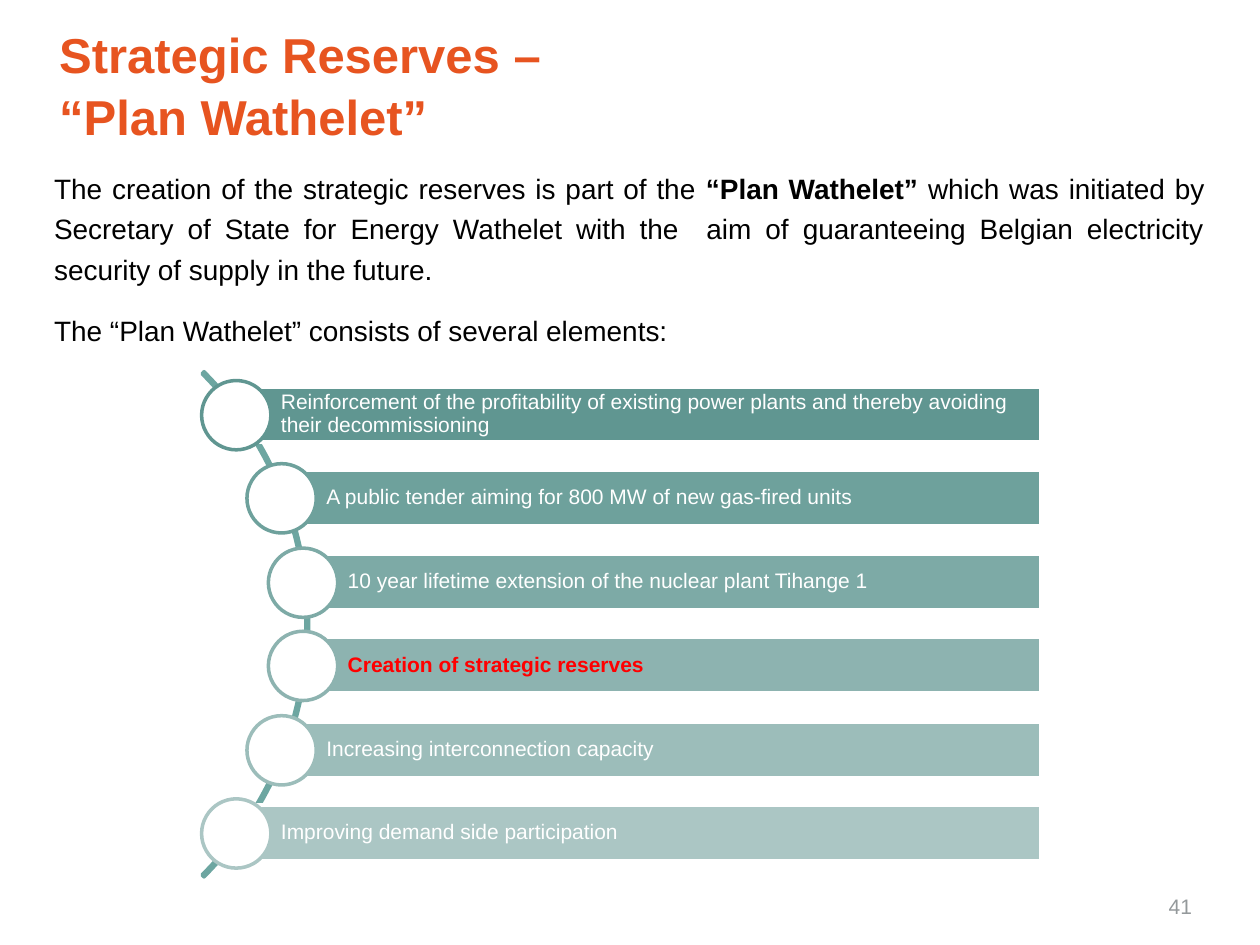
from dataclasses import dataclass

from lxml.etree import SubElement
from pptx import Presentation
from pptx.dml.color import RGBColor
from pptx.enum.shapes import MSO_SHAPE as Shape
from pptx.enum.text import MSO_ANCHOR as Anchor, MSO_AUTO_SIZE as AutoSize, PP_ALIGN as Align
from pptx.oxml.ns import qn
from pptx.util import Emu, Pt

EMU_PER_PX = 9144  # 100 px to the inch


@dataclass(frozen=True)
class Theme:
    font: str = "Arial"
    title: str = "E75420"
    body: str = "000000"
    number: str = "94999B"
    arc: str = "6DA6A1"
    white: str = "FFFFFF"
    highlight: str = "FF0000"
    title_size: int = 28
    body_size: int = 16
    small_size: int = 12
    line_width: int = 2


@dataclass(frozen=True)
class Element:
    text: str
    left: int
    color: str
    highlighted: bool = False


THEME = Theme()
BAR_TOP, BAR_RIGHT, BAR_HEIGHT, BAR_PITCH = 307, 826, 44, 66.4
CIRCLE_SIZE = 55
ELEMENTS = [
    Element("Reinforcement of the profitability of existing power plants "
            "and thereby avoiding their decommissioning", 188, "609691"),
    Element("A public tender aiming for 800 MW of new gas-fired units", 224, "6EA19C"),
    Element("10 year lifetime extension of the nuclear plant Tihange 1", 241, "7DAAA6"),
    Element("Creation of strategic reserves", 241, "8DB3B0", highlighted=True),
    Element("Increasing interconnection capacity", 224, "9CBDBA"),
    Element("Improving demand side participation", 188, "ABC6C4"),
]
INTRODUCTION = [
    ("The creation of the strategic reserves is part of the ", False),
    ("“Plan Wathelet” ", True),
    ("which was initiated by Secretary of State for Energy Wathelet with the  aim of "
     "guaranteeing Belgian electricity security of supply in the future.", False),
]


def px(length: float) -> Emu:
    return Emu(round(length * EMU_PER_PX))


def box(left: int, top: int, width: int, height: int) -> tuple[Emu, ...]:
    return px(left), px(top), px(width), px(height)


def format_font(paragraph, size: int, color: str, bold: bool | None = None) -> None:
    font = paragraph.font
    font.name, font.size, font.bold = THEME.font, Pt(size), bold
    font.color.rgb = RGBColor.from_string(color)


def format_frame(frame, anchor: Anchor, left: int = 0, other: int = 0) -> None:
    """Wrap the text, anchor it and set its left inset and the other three insets."""
    frame.word_wrap, frame.auto_size = True, AutoSize.NONE
    frame.vertical_anchor = anchor
    frame.margin_left = px(left)
    frame.margin_top = frame.margin_right = frame.margin_bottom = px(other)


def add_outlined(slide, kind: Shape, bounds: tuple[Emu, ...], line: str, fill: str | None = None):
    shape = slide.shapes.add_shape(kind, *bounds)
    shape.shadow.inherit = False
    if fill:
        shape.fill.solid()
        shape.fill.fore_color.rgb = RGBColor.from_string(fill)
    else:
        shape.fill.background()
    shape.line.color.rgb = RGBColor.from_string(line)
    shape.line.width = Pt(THEME.line_width)
    return shape


def add_title(slide) -> None:
    title = slide.shapes.title
    title.left, title.top, title.width, title.height = box(47, 21, 906, 94)
    format_frame(title.text_frame, Anchor.BOTTOM)
    title.text_frame.text = "Strategic Reserves – \v“Plan Wathelet”"
    paragraph = title.text_frame.paragraphs[0]
    paragraph.alignment, paragraph.line_spacing = Align.LEFT, 1.05
    format_font(paragraph, THEME.title_size, THEME.title, bold=True)


def add_introduction(slide) -> None:
    frame = slide.shapes.add_textbox(*box(43, 131, 913, 181)).text_frame
    format_frame(frame, Anchor.TOP)
    opening, lead_in = frame.paragraphs[0], frame.add_paragraph()
    opening.alignment = Align.JUSTIFY
    for text, bold in INTRODUCTION:
        run = opening.add_run()
        run.text = text
        if bold:
            run.font.bold = True
    lead_in.text = "The “Plan Wathelet” consists of several elements:"
    lead_in.space_before = Pt(6)
    for paragraph in frame.paragraphs:
        paragraph.line_spacing, paragraph.space_after = 1.2, Pt(6)
        format_font(paragraph, THEME.body_size, THEME.body)


def add_arc(slide) -> None:
    arc = add_outlined(slide, Shape.BLOCK_ARC, box(-322, 212, 567, 567), THEME.arc)
    for index, value in enumerate((189, 27, 0.004)):
        arc.adjustments[index] = value


def add_element(slide, element: Element, top: int) -> None:
    """Draw a labelled bar with a circle over its left end."""
    bounds = box(element.left, top, BAR_RIGHT - element.left, BAR_HEIGHT)
    bar = add_outlined(slide, Shape.RECTANGLE, bounds, THEME.white, element.color)
    format_frame(bar.text_frame, Anchor.MIDDLE, left=35, other=3)
    paragraph = bar.text_frame.paragraphs[0]
    paragraph.text = element.text
    paragraph.alignment, paragraph.line_spacing = Align.LEFT, 0.9
    color = THEME.highlight if element.highlighted else THEME.white
    format_font(paragraph, THEME.small_size, color, element.highlighted or None)
    circle = box(element.left - 28, top - 5, CIRCLE_SIZE, CIRCLE_SIZE)
    add_outlined(slide, Shape.OVAL, circle, element.color, THEME.white)


def add_slide_number(slide) -> None:
    frame = slide.shapes.add_textbox(*box(723, 707, 233, 24)).text_frame
    format_frame(frame, Anchor.MIDDLE, left=10, other=5)
    frame.margin_right = px(10)
    paragraph = frame.paragraphs[0]
    paragraph.alignment = Align.RIGHT
    field = SubElement(paragraph._p, qn("a:fld"), type="slidenum",
                       id="{B6F15528-21DE-4FAA-801E-634DDDAF4B2B}")
    SubElement(field, qn("a:rPr"), lang="en-GB")
    SubElement(field, qn("a:t")).text = "41"
    format_font(paragraph, THEME.small_size, THEME.number)


def main() -> None:
    presentation = Presentation()
    presentation.slide_width, presentation.slide_height = px(1000), px(750)
    presentation.element.set("firstSlideNum", "41")
    slide = presentation.slides.add_slide(presentation.slide_layouts[5])
    add_title(slide)
    add_introduction(slide)
    add_slide_number(slide)
    add_arc(slide)
    for index, element in enumerate(ELEMENTS):
        add_element(slide, element, BAR_TOP + round(index * BAR_PITCH))
    presentation.save("out.pptx")


if __name__ == "__main__":
    main()
